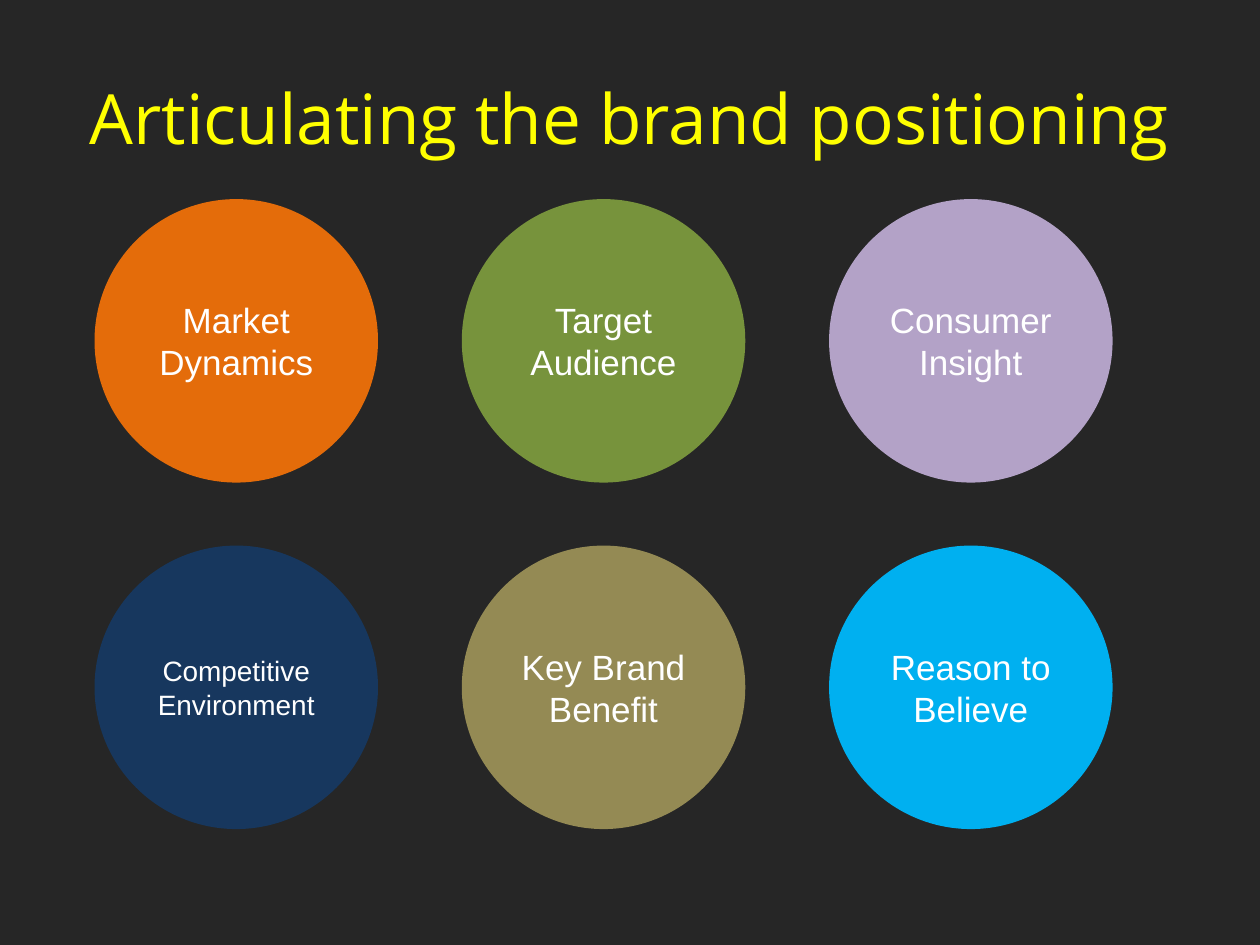
"""Build the brand positioning slide with its grid of six circles."""
from dataclasses import dataclass

from pptx import Presentation
from pptx.dml.color import RGBColor
from pptx.enum.shapes import MSO_SHAPE
from pptx.enum.text import MSO_ANCHOR, PP_ALIGN
from pptx.slide import Slide
from pptx.text.text import TextFrame
from pptx.util import Inches, Pt

OVAL = MSO_SHAPE.OVAL
MIDDLE = MSO_ANCHOR.MIDDLE
CENTER = PP_ALIGN.CENTER

COLUMNS = 3
DIAMETER = 2.25
GRID_LEFT, GRID_TOP = 0.75, 1.58
COLUMN_STEP, ROW_STEP = 2.915, 2.75


@dataclass(frozen=True)
class Topic:
    """One circle of the positioning grid."""

    label: str
    fill: str
    size: float = 20


TOPICS = [
    Topic("Market Dynamics", "E46C0A"),
    Topic("Target Audience", "77933C"),
    Topic("Consumer Insight", "B3A2C7"),
    Topic("Competitive Environment", "17375E", 16),
    Topic("Key Brand Benefit", "948A54"),
    Topic("Reason to Believe", "00B0F0"),
]


def color(value: str) -> RGBColor:
    """Turn a hex string into a colour."""
    return RGBColor.from_string(value)


def write(frame: TextFrame, text: str, font: str, size: float, ink: str) -> None:
    """Write one centred line of text that wraps inside its frame."""
    frame.word_wrap = True
    frame.vertical_anchor = MIDDLE
    para = frame.paragraphs[0]
    para.alignment = CENTER
    span = para.add_run()
    span.text = text
    span.font.name = font
    span.font.size = Pt(size)
    span.font.color.rgb = color(ink)


def add_title(page: Slide, text: str) -> None:
    """Add the slide heading."""
    box = page.shapes.add_textbox(Inches(0.5), Inches(0.3), Inches(9), Inches(1.25))
    write(box.text_frame, text, "Open Sans", 39.6, "FFFF00")


def add_topic(page: Slide, topic: Topic, row: int, column: int) -> None:
    """Add a topic circle at its place in the grid."""
    left = Inches(GRID_LEFT + column * COLUMN_STEP)
    top = Inches(GRID_TOP + row * ROW_STEP)
    circle = page.shapes.add_shape(OVAL, left, top, Inches(DIAMETER), Inches(DIAMETER))
    circle.shadow.inherit = False
    circle.fill.solid()
    circle.fill.fore_color.rgb = color(topic.fill)
    circle.line.fill.background()
    write(circle.text_frame, topic.label, "Arial", topic.size, "FFFFFF")


def main() -> None:
    """Build and save the deck."""
    deck = Presentation()
    deck.slide_width, deck.slide_height = Inches(10), Inches(7.5)
    page = deck.slides.add_slide(deck.slide_layouts[6])
    page.background.fill.solid()
    page.background.fill.fore_color.rgb = color("262626")
    add_title(page, "Articulating the brand positioning")
    for index, topic in enumerate(TOPICS):
        add_topic(page, topic, *divmod(index, COLUMNS))
    deck.save("out.pptx")


if __name__ == "__main__":
    main()
